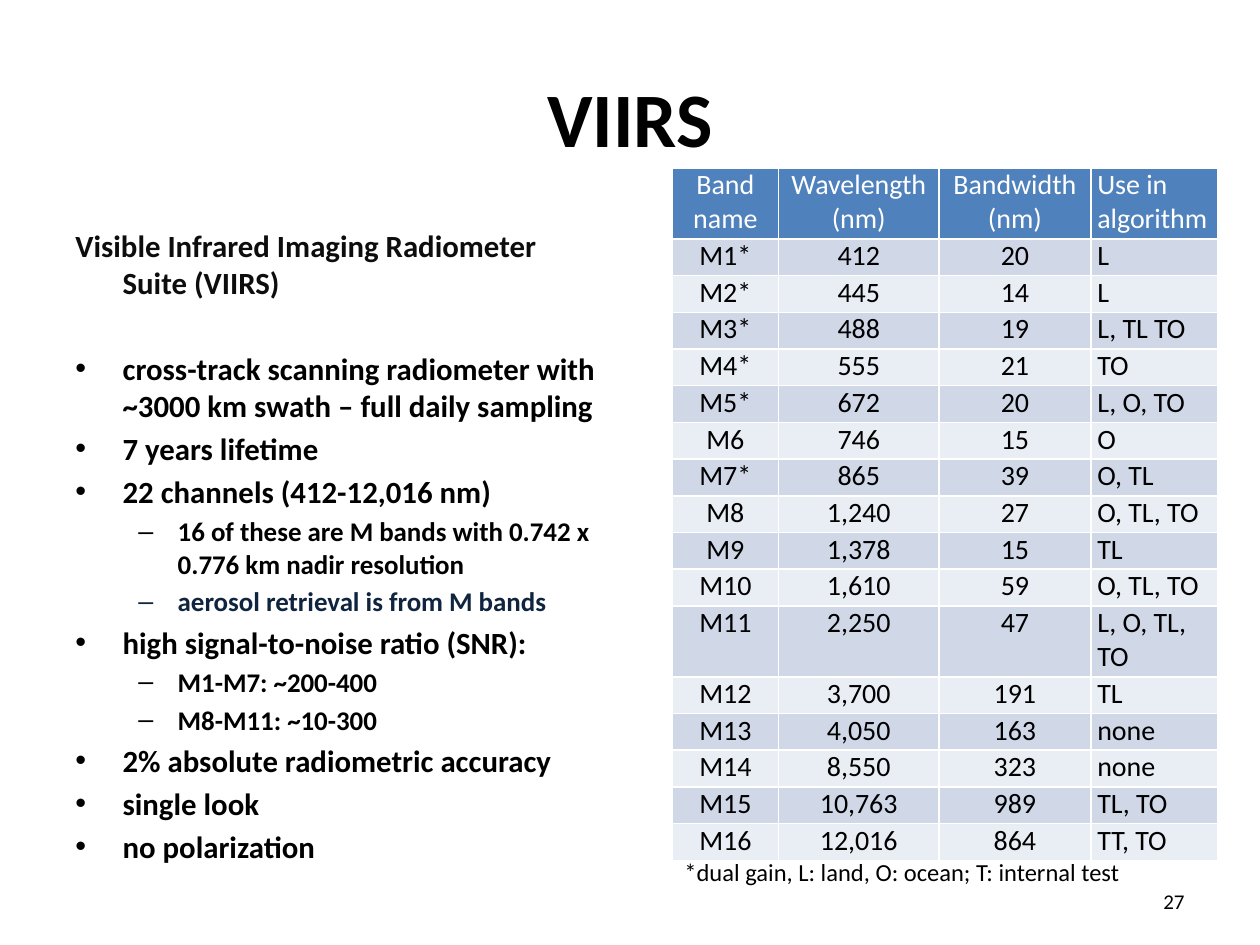
from dataclasses import dataclass

from pptx import Presentation
from pptx.dml.color import RGBColor
from pptx.enum.text import MSO_ANCHOR as Anchor, PP_ALIGN as Align
from pptx.oxml.ns import qn
from pptx.util import Pt
from lxml.etree import SubElement

FONT = "Calibri"
COLORS = {
    "text": "000000",
    "heading": "0D0D0D",
    "highlight": "0F243E",
    "white": "FFFFFF",
    "header": "4F81BD",
    "odd_row": "D0D8E8",
    "even_row": "E9EDF4",
}


@dataclass(frozen=True)
class Box:
    left: float
    top: float
    width: float
    height: float

    def lengths(self) -> tuple:
        return Pt(self.left), Pt(self.top), Pt(self.width), Pt(self.height)


@dataclass(frozen=True)
class Level:
    bullet: str
    size: float
    margin: float
    hanging: float
    space_before: float


@dataclass(frozen=True)
class Point:
    text: str
    level: Level
    color: str = "text"
    extra_space: float = 0


HEADING = Level("", 17.6, 27, 27, 0)
MAIN = Level("•", 17.6, 27, 27, 3.5)
SUB = Level("–", 15.4, 58.5, 22.5, 3)

POINTS = [
    Point("Visible Infrared Imaging Radiometer Suite (VIIRS)", HEADING, "heading"),
    Point("cross-track scanning radiometer with ~3000 km swath – full daily sampling",
          MAIN, extra_space=24.5),
    Point("7 years lifetime", MAIN),
    Point("22 channels (412-12,016 nm)", MAIN),
    Point("16 of these are M bands with 0.742 x 0.776 km nadir resolution", SUB),
    Point("aerosol retrieval is from M bands", SUB, "highlight"),
    Point("high signal-to-noise ratio (SNR):", MAIN),
    Point("M1-M7: ~200-400", SUB),
    Point("M8-M11: ~10-300", SUB),
    Point("2% absolute radiometric accuracy", MAIN),
    Point("single look", MAIN),
    Point("no polarization", MAIN),
]

BANDS = [
    ("Band name", "Wavelength (nm)", "Bandwidth (nm)", "Use in algorithm"),
    ("M1*", "412", "20", "L"),
    ("M2*", "445", "14", "L"),
    ("M3*", "488", "19", "L, TL TO"),
    ("M4*", "555", "21", "TO"),
    ("M5*", "672", "20", "L, O, TO"),
    ("M6", "746", "15", "O"),
    ("M7*", "865", "39", "O, TL"),
    ("M8", "1,240", "27", "O, TL, TO"),
    ("M9", "1,378", "15", "TL"),
    ("M10", "1,610", "59", "O, TL, TO"),
    ("M11", "2,250", "47", "L, O, TL, TO"),
    ("M12", "3,700", "191", "TL"),
    ("M13", "4,050", "163", "none"),
    ("M14", "8,550", "323", "none"),
    ("M15", "10,763", "989", "TL, TO"),
    ("M16", "12,016", "864", "TT, TO"),
]
COLUMN_WIDTHS = (61, 91.5, 87, 72.5)
ROW_HEIGHT, TWO_LINE_HEIGHT = 21, 40.5
TWO_LINE_ROWS = ("Band name", "M11")


def rgb(color: str) -> RGBColor:
    return RGBColor.from_string(COLORS[color])


def write(paragraph, text: str, *, size: float, color: str = "text",
          bold: bool = False, align=Align.LEFT) -> None:
    paragraph.alignment = align
    run = paragraph.add_run()
    run.text = text
    font = run.font
    font.name, font.size, font.bold = FONT, Pt(size), bold
    font.color.rgb = rgb(color)


def add_frame(slide, box: Box, anchor=Anchor.TOP):
    frame = slide.shapes.add_textbox(*box.lengths()).text_frame
    frame.word_wrap = True
    frame.vertical_anchor = anchor
    return frame


def set_level(paragraph, level: Level) -> None:
    """Give a paragraph the hanging indent and bullet of its level."""
    props = paragraph._p.get_or_add_pPr()
    props.set("marL", str(Pt(level.margin)))
    props.set("indent", str(-Pt(level.hanging)))
    if level.bullet:
        SubElement(props, qn("a:buFont"), typeface="Arial")
        SubElement(props, qn("a:buChar"), char=level.bullet)
    else:
        SubElement(props, qn("a:buNone"))


def add_points(slide, box: Box, points: list[Point]) -> None:
    frame = add_frame(slide, box)
    for index, point in enumerate(points):
        paragraph = frame.add_paragraph() if index else frame.paragraphs[0]
        set_level(paragraph, point.level)
        paragraph.space_before = Pt(point.level.space_before + point.extra_space)
        write(paragraph, point.text, size=point.level.size,
              color=point.color, bold=True)


def add_borders(cell) -> None:
    props = cell._tc.get_or_add_tcPr()
    for side in ("lnL", "lnR", "lnT", "lnB"):
        line = SubElement(props, qn(f"a:{side}"), w=str(Pt(1)))
        fill = SubElement(line, qn("a:solidFill"))
        SubElement(fill, qn("a:srgbClr"), val=COLORS["white"])


def fill_cell(cell, text: str, row: int, column: int) -> None:
    is_header = row == 0
    cell.margin_left = cell.margin_right = Pt(3.6)
    cell.margin_top, cell.margin_bottom = Pt(0), Pt(1.4)
    cell.vertical_anchor = Anchor.MIDDLE if is_header else Anchor.TOP
    add_borders(cell)
    cell.fill.solid()
    cell.fill.fore_color.rgb = rgb(
        "header" if is_header else "odd_row" if row % 2 else "even_row")
    is_last = column == len(COLUMN_WIDTHS) - 1
    write(cell.text_frame.paragraphs[0], text, size=16,
          color="white" if is_header else "text",
          align=Align.LEFT if is_last else Align.CENTER)


def add_band_table(slide, left: float, top: float) -> None:
    heights = [TWO_LINE_HEIGHT if band[0] in TWO_LINE_ROWS else ROW_HEIGHT
               for band in BANDS]
    box = Box(left, top, sum(COLUMN_WIDTHS), sum(heights))
    table = slide.shapes.add_table(
        len(BANDS), len(COLUMN_WIDTHS), *box.lengths()).table
    for column, width in zip(table.columns, COLUMN_WIDTHS):
        column.width = Pt(width)
    for row, (band, height) in enumerate(zip(BANDS, heights)):
        table.rows[row].height = Pt(height)
        for column, text in enumerate(band):
            fill_cell(table.cell(row, column), text, row, column)


def main() -> None:
    deck = Presentation()
    deck.slide_width, deck.slide_height = Pt(720), Pt(540)
    slide = deck.slides.add_slide(deck.slide_layouts[6])

    title = add_frame(slide, Box(36, 21.6, 648, 90), Anchor.MIDDLE)
    write(title.paragraphs[0], "VIIRS", size=44, bold=True, align=Align.CENTER)
    page = add_frame(slide, Box(516, 500.4, 168, 28.8), Anchor.MIDDLE)
    write(page.paragraphs[0], "27", size=12, align=Align.RIGHT)
    add_points(slide, Box(36, 126, 318, 356.4), POINTS)
    add_band_table(slide, 384, 96)
    legend = add_frame(slide, Box(384, 486, 264, 24.5))
    write(legend.paragraphs[0],
          "*dual gain, L: land, O: ocean; T: internal test", size=14)

    deck.save("out.pptx")


if __name__ == "__main__":
    main()
